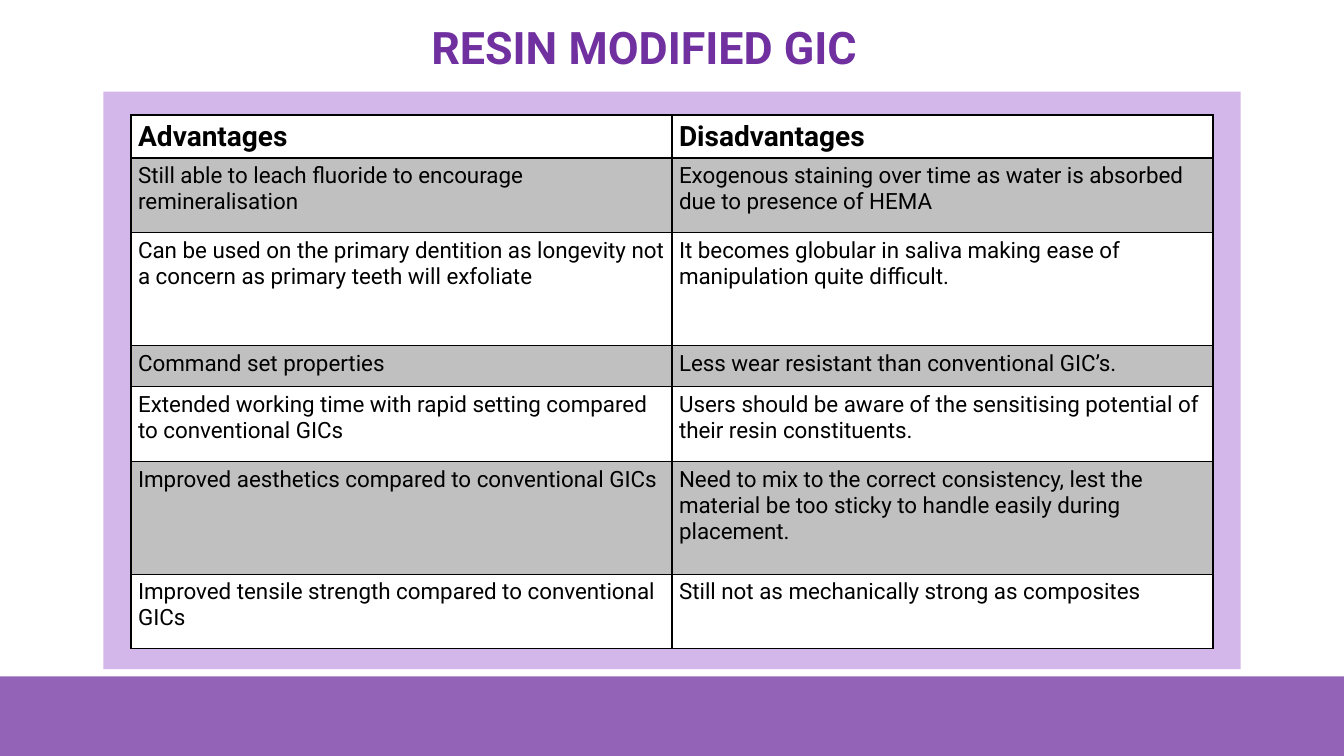
from lxml.etree import SubElement
from pptx import Presentation
from pptx.dml.color import RGBColor
from pptx.enum.shapes import MSO_SHAPE
from pptx.oxml import parse_xml
from pptx.oxml.ns import nsdecls, qn
from pptx.util import Inches, Pt

TITLE = "RESIN MODIFIED GIC"
HEADINGS = ("Advantages", "Disadvantages")
COMPARISONS = [
    ("Still able to leach fluoride to encourage remineralisation",
     "Exogenous staining over time as water is absorbed due to presence of HEMA"),
    ("Can be used on the primary dentition as longevity not a concern as primary teeth will exfoliate",
     "It becomes globular in saliva making ease of manipulation quite difficult."),
    ("Command set properties",
     "Less wear resistant than conventional GIC’s."),
    ("Extended working time with rapid setting compared to conventional GICs",
     "Users should be aware of the sensitising potential of their resin constituents."),
    ("Improved aesthetics compared to conventional GICs",
     "Need to mix to the correct consistency, lest the material be too sticky to handle easily during placement."),
    ("Improved tensile strength compared to conventional GICs",
     "Still not as mechanically strong as composites"),
]
ROW_LINES = (1, 2, 3, 1, 2, 3, 2)
LINE_HEIGHTS = {1: 0.41, 2: 0.74, 3: 1.12}
COLORS = {"purple": "7030A0", "lilac": "D3B6EA", "black": "000000",
          "white": "FFFFFF", "gray": "C0C0C0"}
FONT = "Roboto"
WIDTH, HEIGHT = 13.33, 7.5
BAND_HEIGHT = 0.79
TABLE_WIDTH, TABLE_TOP = 10.73, 1.14
PANEL_WIDTH, PANEL_TOP, PANEL_HEIGHT = 11.28, 0.91, 5.73
THIN, THICK = 1, 2.25


def color(name):
    return RGBColor.from_string(COLORS[name])


def add_rectangle(page, left, top, width, height, fill):
    box = page.shapes.add_shape(MSO_SHAPE.RECTANGLE, Inches(left), Inches(top),
                                Inches(width), Inches(height))
    box.shadow.inherit = False
    box.fill.solid()
    box.fill.fore_color.rgb = color(fill)
    box.line.fill.background()
    return box


def set_font(paragraph, size, bold, name):
    font = paragraph.font
    font.name, font.size, font.bold = FONT, Pt(size), bold
    font.color.rgb = color(name)


def add_borders(cell, top, bottom):
    sides = (("L", THIN), ("R", THIN), ("T", top), ("B", bottom))
    for position, (side, points) in enumerate(sides):
        border = parse_xml(
            f'<a:ln{side} {nsdecls("a")} w="{Pt(points)}"><a:solidFill>'
            f'<a:srgbClr val="{COLORS["black"]}"/></a:solidFill></a:ln{side}>')
        cell._tc.get_or_add_tcPr().insert(position, border)


def fill_cell(cell, text, row, last_row):
    heading = row == 0
    cell.text = text
    cell.margin_left = cell.margin_right = Inches(0.07)
    cell.margin_top = cell.margin_bottom = Inches(0.05)
    set_font(cell.text_frame.paragraphs[0], 20 if heading else 16, heading, "black")
    cell.fill.solid()
    cell.fill.fore_color.rgb = color("gray" if row % 2 else "white")
    add_borders(cell, THICK if row == 1 else THIN, THICK if heading else THIN)


def add_comparison_table(page):
    rows = [HEADINGS, *COMPARISONS]
    heights = [LINE_HEIGHTS[lines] for lines in ROW_LINES]
    frame = page.shapes.add_table(
        len(rows), len(HEADINGS), Inches((WIDTH - TABLE_WIDTH) / 2), Inches(TABLE_TOP),
        Inches(TABLE_WIDTH), Inches(sum(heights)))
    table = frame.table
    for row, (texts, height) in enumerate(zip(rows, heights)):
        table.rows[row].height = Inches(height)
        for column, text in enumerate(texts):
            fill_cell(table.cell(row, column), text, row, len(rows) - 1)


def add_title(page):
    box = page.shapes.add_textbox(Inches(4.18), Inches(0.15), Inches(5.9), Inches(0.64))
    box.text_frame.word_wrap = True
    para = box.text_frame.paragraphs[0]
    para.text = TITLE
    set_font(para, 32, True, "purple")


def main():
    deck = Presentation()
    deck.slide_width, deck.slide_height = Inches(WIDTH), Inches(HEIGHT)
    page = deck.slides.add_slide(deck.slide_layouts[6])
    band = add_rectangle(page, 0, HEIGHT - BAND_HEIGHT, WIDTH, BAND_HEIGHT, "purple")
    shade = band.fill._xPr.find(qn("a:solidFill"))[0]
    SubElement(shade, qn("a:alpha"), val="75000")
    add_rectangle(page, (WIDTH - PANEL_WIDTH) / 2, PANEL_TOP,
                  PANEL_WIDTH, PANEL_HEIGHT, "lilac")
    add_comparison_table(page)
    add_title(page)
    deck.save("out.pptx")


if __name__ == "__main__":
    main()
